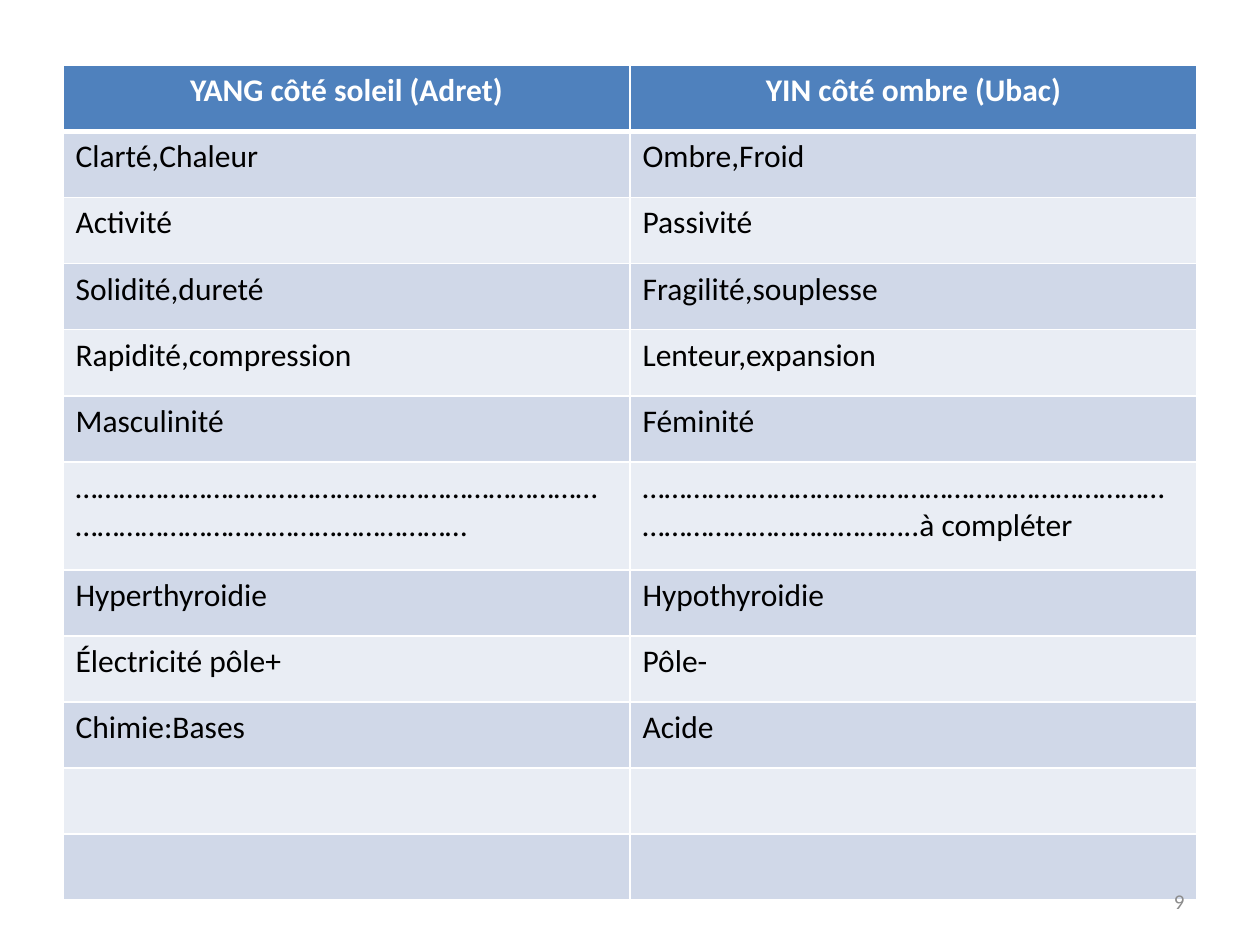
from dataclasses import dataclass
from typing import NamedTuple

from lxml.etree import SubElement
from pptx import Presentation
from pptx.dml.color import RGBColor
from pptx.enum.text import MSO_ANCHOR, PP_ALIGN
from pptx.oxml.ns import qn
from pptx.util import Pt


@dataclass(frozen=True)
class Theme:
    font: str = "Calibri"
    body_size: float = 18
    number_size: float = 12
    header_fill: str = "4F81BD"
    band_fills: tuple[str, str] = ("D0D8E8", "E9EDF4")
    header_text: str = "FFFFFF"
    body_text: str = "000000"
    number_text: str = "8C8C8C"
    border: str = "FFFFFF"
    thin_border: float = 1
    thick_border: float = 3


class Opposites(NamedTuple):
    yang: str
    yin: str
    height: float = 37.75


THEME = Theme()
ROWS = [
    Opposites("YANG côté soleil (Adret)", "YIN côté ombre (Ubac)"),
    Opposites("Clarté,Chaleur", "Ombre,Froid"),
    Opposites("Activité", "Passivité"),
    Opposites("Solidité,dureté", "Fragilité,souplesse"),
    Opposites("Rapidité,compression", "Lenteur,expansion"),
    Opposites("Masculinité", "Féminité"),
    Opposites("…" * 42, "…" * 36 + "..à compléter", 61.9),
    Opposites("Hyperthyroidie", "Hypothyroidie"),
    Opposites("Électricité pôle+", "Pôle-"),
    Opposites("Chimie:Bases", "Acide"),
    Opposites("", ""),
    Opposites("", ""),
]


def style_paragraph(paragraph, size: float, color: str, alignment, bold: bool = False) -> None:
    paragraph.alignment = alignment
    paragraph.font.name = THEME.font
    paragraph.font.size = Pt(size)
    paragraph.font.bold = bold
    paragraph.font.color.rgb = RGBColor.from_string(color)


def add_borders(cell, top: float, bottom: float) -> None:
    properties = cell._tc.get_or_add_tcPr()
    widths = {"lnL": THEME.thin_border, "lnR": THEME.thin_border, "lnT": top, "lnB": bottom}
    for side, width in widths.items():
        line = SubElement(properties, qn(f"a:{side}"), w=str(Pt(width)))
        fill = SubElement(line, qn("a:solidFill"))
        SubElement(fill, qn("a:srgbClr"), val=THEME.border)


def fill_cell(cell, text: str, row_index: int) -> None:
    is_header = row_index == 0
    add_borders(
        cell,
        top=THEME.thick_border if row_index == 1 else THEME.thin_border,
        bottom=THEME.thick_border if is_header else THEME.thin_border,
    )
    color = THEME.header_fill if is_header else THEME.band_fills[(row_index - 1) % 2]
    cell.fill.solid()
    cell.fill.fore_color.rgb = RGBColor.from_string(color)
    cell.text = text
    style_paragraph(
        cell.text_frame.paragraphs[0],
        THEME.body_size,
        THEME.header_text if is_header else THEME.body_text,
        PP_ALIGN.CENTER if is_header else PP_ALIGN.LEFT,
        is_header,
    )


def add_opposites_table(slide, rows: list[Opposites]) -> None:
    height = sum(row.height for row in rows)
    frame = slide.shapes.add_table(len(rows), 2, Pt(36), Pt(37.5), Pt(648), Pt(height))
    table = frame.table
    for row_index, row in enumerate(rows):
        table.rows[row_index].height = Pt(row.height)
        for column_index, text in enumerate((row.yang, row.yin)):
            fill_cell(table.cell(row_index, column_index), text, row_index)


def add_page_number(slide, number: str) -> None:
    text_box = slide.shapes.add_textbox(Pt(516), Pt(500.5), Pt(168), Pt(28.75))
    text_frame = text_box.text_frame
    text_frame.word_wrap = True
    text_frame.vertical_anchor = MSO_ANCHOR.MIDDLE
    text_frame.text = number
    style_paragraph(
        text_frame.paragraphs[0], THEME.number_size, THEME.number_text, PP_ALIGN.RIGHT
    )


def main() -> None:
    presentation = Presentation()
    presentation.slide_width = Pt(720)
    presentation.slide_height = Pt(540)
    slide = presentation.slides.add_slide(presentation.slide_layouts[6])
    add_opposites_table(slide, ROWS)
    add_page_number(slide, "9")
    presentation.save("out.pptx")


if __name__ == "__main__":
    main()
